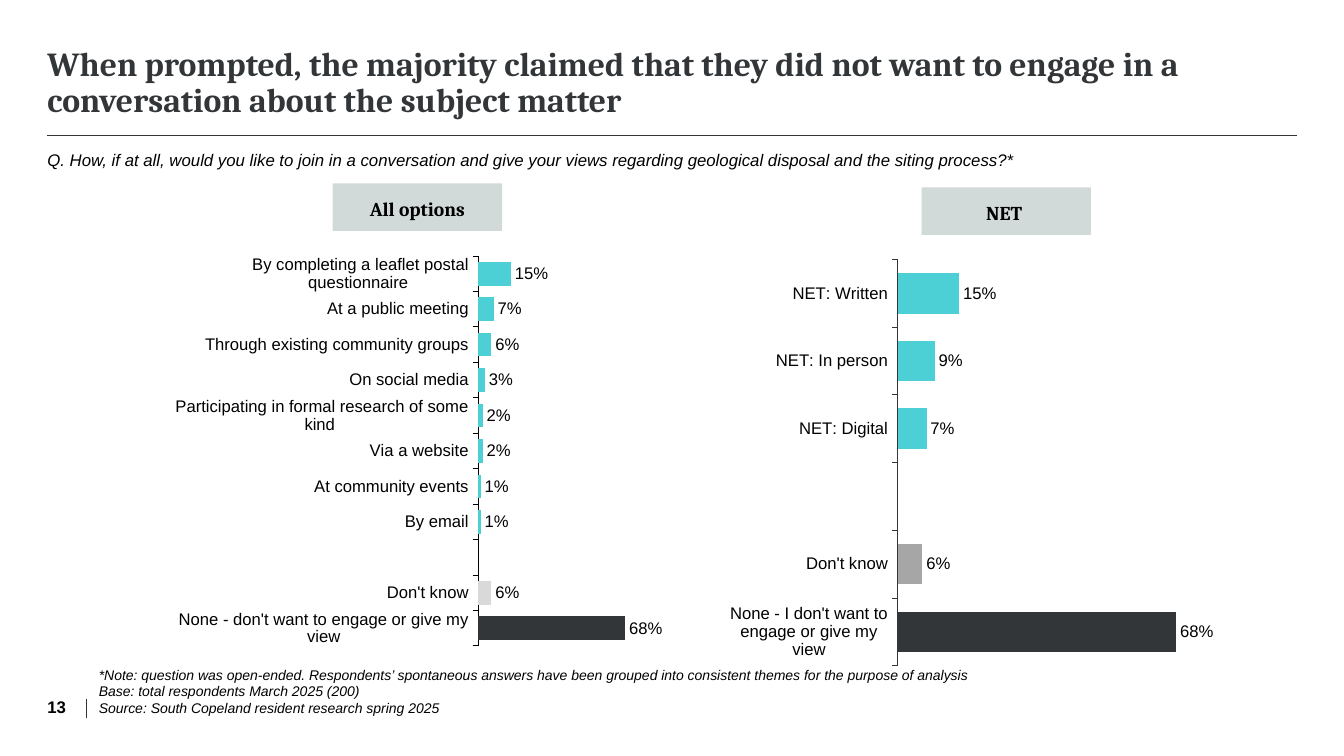
from lxml.etree import SubElement
from pptx import Presentation
from pptx.chart.data import CategoryChartData
from pptx.dml.color import RGBColor
from pptx.enum.chart import XL_CHART_TYPE, XL_LABEL_POSITION, XL_TICK_MARK
from pptx.enum.shapes import MSO_CONNECTOR, MSO_SHAPE
from pptx.enum.text import MSO_ANCHOR, PP_ALIGN
from pptx.oxml import parse_xml
from pptx.oxml.ns import nsdecls, qn
from pptx.util import Inches, Pt

COLORS = {
    "ink": "323638",
    "black": "000000",
    "teal": "4DCFD6",
    "light_grey": "D9D9D9",
    "grey": "A6A6A6",
    "label": "D1D9D9",
}
ALL_OPTIONS = [
    ("By completing a leaflet postal questionnaire ", 0.15),
    ("At a public meeting", 0.07),
    ("Through existing community groups", 0.06),
    ("On social media", 0.03),
    ("Participating in formal research of some kind ", 0.02),
    ("Via a website", 0.02),
    ("At community events", 0.01),
    ("By email", 0.01),
    ("", None),
    ("Don't know", 0.06),
    ("None - don't want to engage or give my view", 0.68),
]
NET = [
    ("NET: Written", 0.15),
    ("NET: In person", 0.09),
    ("NET: Digital", 0.07),
    ("", None),
    ("Don't know", 0.06),
    ("None - I don't want to engage or give my view", 0.68),
]
FOOTNOTES = [
    "*Note: question was open-ended. Respondents’ spontaneous answers have been "
    "grouped into consistent themes for the purpose of analysis",
    "Base: total respondents March 2025 (200)",
    "Source: South Copeland resident research spring 2025",
]


def color(name):
    return RGBColor.from_string(COLORS[name])


def set_font(font, size, name="Arial", fill="black", bold=False, italic=False):
    font.name = name
    font.size = Pt(size)
    font.bold = bold
    font.italic = italic
    font.color.rgb = color(fill)


def add_text(slide, box, lines, anchor=MSO_ANCHOR.TOP, spacing=None, **font):
    shape = slide.shapes.add_textbox(*map(Inches, box))
    frame = shape.text_frame
    frame.word_wrap = True
    frame.vertical_anchor = anchor
    frame.margin_left = frame.margin_right = 0
    frame.margin_top = frame.margin_bottom = 0
    frame.text = "\n".join(lines)
    for paragraph in frame.paragraphs:
        paragraph.line_spacing = spacing
        set_font(paragraph.font, **font)


def add_rule(slide, start, end, width):
    line = slide.shapes.add_connector(
        MSO_CONNECTOR.STRAIGHT, *map(Inches, start + end))
    line.line.color.rgb = color("ink")
    line.line.width = Pt(width)
    SubElement(line._element.spPr, qn("a:effectLst"))


def add_chart_heading(slide, left, top, text):
    shape = slide.shapes.add_shape(
        MSO_SHAPE.RECTANGLE, Inches(left), Inches(top), Inches(1.68), Inches(0.47))
    shape.shadow.inherit = False
    shape.fill.solid()
    shape.fill.fore_color.rgb = color("label")
    shape.line.fill.background()
    frame = shape.text_frame
    frame.vertical_anchor = MSO_ANCHOR.MIDDLE
    paragraph = frame.paragraphs[0]
    paragraph.text = text
    paragraph.alignment = PP_ALIGN.CENTER
    paragraph.line_spacing = 1.12
    set_font(paragraph.font, 14, "Cambria", bold=True)


def place_plot(chart, area):
    """Fix the inner plot area, given as fractions x, y, w, h of the chart."""
    plot_area = chart._chartSpace.chart.plotArea
    for layout in plot_area.findall(qn("c:layout")):
        plot_area.remove(layout)
    sizes = "".join(f'<c:{key} val="{value}"/>' for key, value in zip("xywh", area))
    plot_area.insert(0, parse_xml(
        f'<c:layout {nsdecls("c")}><c:manualLayout><c:layoutTarget val="inner"/>'
        f'<c:xMode val="edge"/><c:yMode val="edge"/>{sizes}'
        '</c:manualLayout></c:layout>'))


def add_bar_chart(slide, box, rows, gap, plot_box, axis_color, unsure_color):
    data = CategoryChartData(number_format="0%")
    data.categories = [name for name, _ in rows]
    data.add_series("Series 1", [value for _, value in rows])
    chart = slide.shapes.add_chart(
        XL_CHART_TYPE.BAR_CLUSTERED, *map(Inches, box), data).chart
    chart.has_legend = False
    chart.has_title = False
    set_font(chart.font, 10)
    place_plot(chart, plot_box)

    category_axis = chart.category_axis
    category_axis.reverse_order = True
    category_axis.has_major_gridlines = False
    category_axis.major_tick_mark = XL_TICK_MARK.OUTSIDE
    category_axis.format.line.color.rgb = color(axis_color)
    category_axis.format.line.width = Pt(0.75)
    set_font(category_axis.tick_labels.font, 12)

    value_axis = chart.value_axis
    value_axis.minimum_scale = 0
    value_axis.maximum_scale = 1
    value_axis.has_major_gridlines = False
    value_axis.visible = False

    plot = chart.plots[0]
    plot.gap_width = gap
    plot.vary_by_categories = False
    series = plot.series[0]
    series.format.fill.solid()
    series.format.fill.fore_color.rgb = color("teal")
    last = len(rows) - 1
    for index, name in ((last - 1, unsure_color), (last, "ink")):
        fill = series.points[index].format.fill
        fill.solid()
        fill.fore_color.rgb = color(name)

    labels = series.data_labels
    labels.show_value = True
    labels.position = XL_LABEL_POSITION.OUTSIDE_END
    labels.number_format = "0%"
    labels.number_format_is_linked = False
    set_font(labels.font, 12)


def main():
    presentation = Presentation()
    presentation.slide_width = Inches(13.33)
    presentation.slide_height = Inches(7.5)
    slide = presentation.slides.add_slide(presentation.slide_layouts[6])

    add_rule(slide, (0.47, 1.34), (12.86, 1.34), 0.75)
    add_rule(slide, (0.86, 6.93), (0.86, 7.12), 0.5)
    add_text(slide, (0.47, 0.65, 12.02, 0.54),
             ["When prompted, the majority claimed that they did not want to engage "
              "in a conversation about the subject matter"],
             MSO_ANCHOR.BOTTOM, 0.9, size=24, name="Cambria", fill="ink", bold=True)
    add_text(slide, (0.47, 1.46, 12.02, 0.36),
             ["Q. How, if at all, would you like to join in a conversation and give "
              "your views regarding geological disposal and the siting process?*"],
             spacing=1.13, size=12, italic=True)

    add_bar_chart(slide, (1.74, 2.46, 5.84, 4.03), ALL_OPTIONS, 50,
                  (0.51, 0.02, 0.37, 0.96), "black", "light_grey")
    add_bar_chart(slide, (7.24, 2.49, 5.84, 4.2), NET, 67,
                  (0.28, 0.02, 0.7, 0.96), "ink", "grey")
    add_chart_heading(slide, 3.3, 1.82, "All options")
    add_chart_heading(slide, 9.14, 1.86, "NET ")

    add_text(slide, (0.47, 6.75, 0.31, 0.36), ["13"], MSO_ANCHOR.BOTTOM,
             size=12, bold=True)
    add_text(slide, (0.98, 6.75, 10.52, 0.36), FOOTNOTES, MSO_ANCHOR.BOTTOM,
             size=10, italic=True)
    presentation.save("out.pptx")


if __name__ == "__main__":
    main()
